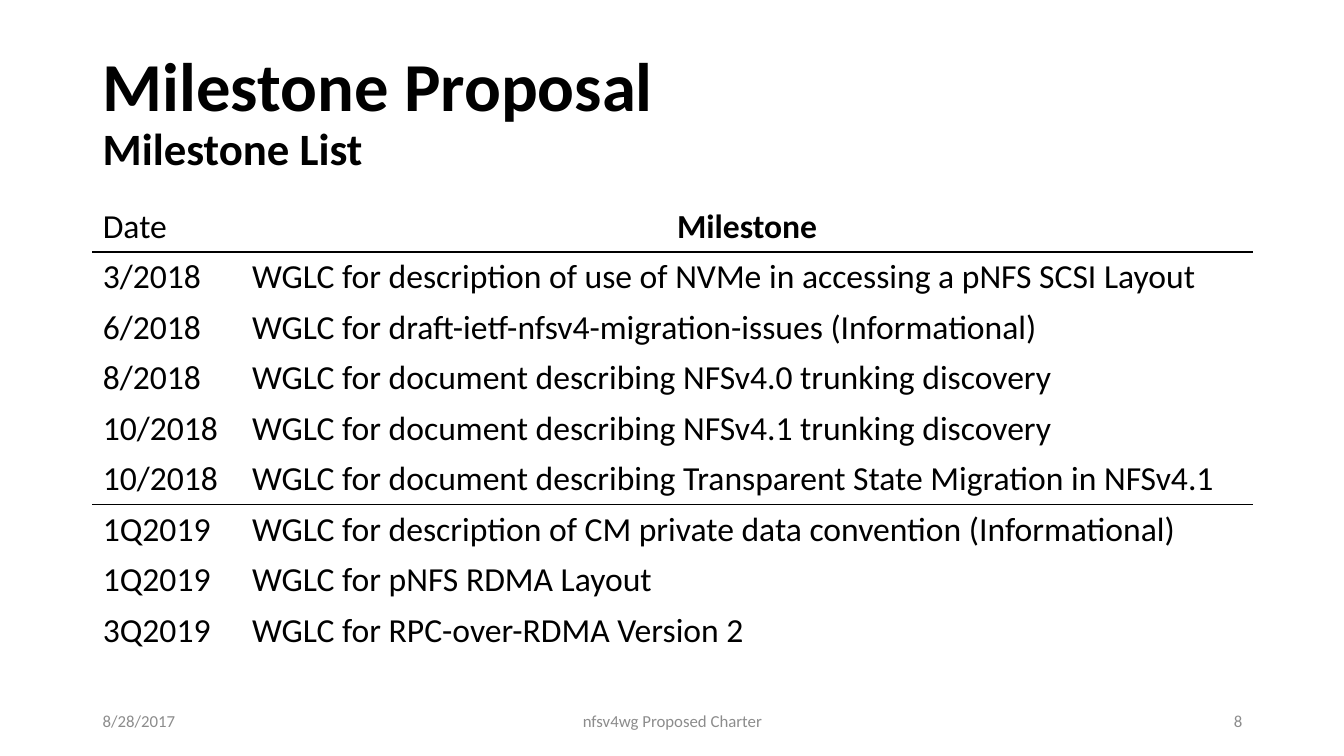
from lxml.etree import fromstring
from pptx import Presentation
from pptx.dml.color import RGBColor
from pptx.enum.text import MSO_ANCHOR, PP_ALIGN
from pptx.util import Inches, Pt

WIDE, HIGH = 13.33, 7.5
EDGE, SPAN = 0.92, 11.5
HUES = {"ink": "000000", "page": "FFFFFF", "foot": "8C8C8C"}
NS = "http://schemas.openxmlformats.org/drawingml/2006/main"
HEAD = ("Date", "Milestone")
GOALS = [
    ("3/2018", "WGLC for description of use of NVMe in accessing a pNFS SCSI Layout"),
    ("6/2018", "WGLC for draft-ietf-nfsv4-migration-issues (Informational)"),
    ("8/2018", "WGLC for document describing NFSv4.0 trunking discovery"),
    ("10/2018", "WGLC for document describing NFSv4.1 trunking discovery"),
    ("10/2018", "WGLC for document describing Transparent State Migration in NFSv4.1"),
    ("1Q2019", "WGLC for description of CM private data convention (Informational)"),
    ("1Q2019", "WGLC for pNFS RDMA Layout"),
    ("3Q2019", "WGLC for RPC-over-RDMA Version 2"),
]
RULED = (0, 5)


def write(para, text, size=24, hue="ink", bold=False, align=PP_ALIGN.LEFT):
    """Add a formatted run to a paragraph."""
    para.alignment = align
    run = para.add_run()
    run.text = text
    font = run.font
    font.name, font.size, font.bold = "Calibri", Pt(size), bold
    font.color.rgb = RGBColor.from_string(HUES[hue])


def add_box(slide, box):
    """Add a wrapped, middle-anchored text box and return its first paragraph."""
    frame = slide.shapes.add_textbox(*map(Inches, box)).text_frame
    frame.word_wrap = True
    frame.vertical_anchor = MSO_ANCHOR.MIDDLE
    return frame.paragraphs[0]


def add_title(slide, box):
    """Place the title and its smaller second line."""
    para = add_box(slide, box)
    para.line_spacing = 0.9
    write(para, "Milestone Proposal", size=49, bold=True)
    para.add_line_break()
    write(para, "Milestone List", size=32, bold=True)


def set_edges(cell, above, below):
    """Draw the four borders of a cell, with the given top and bottom hues."""
    props = cell._tc.get_or_add_tcPr()
    sides = {"L": "page", "R": "page", "T": above, "B": below}
    for spot, (side, hue) in enumerate(sides.items()):
        props.insert(spot, fromstring(
            f'<a:ln{side} xmlns:a="{NS}" w="{Pt(1)}"><a:solidFill>'
            f'<a:srgbClr val="{HUES[hue]}"/></a:solidFill></a:ln{side}>'))


def add_goals(slide, box):
    """Place the milestone table, ruled below the header and the 2018 rows."""
    rows = [HEAD, *GOALS]
    grid = slide.shapes.add_table(len(rows), len(HEAD), *map(Inches, box)).table
    grid.first_row = grid.horz_banding = False
    dates = 1.48
    for col, wide in zip(grid.columns, (dates, box[2] - dates)):
        col.width = Inches(wide)
    for r, texts in enumerate(rows):
        above = "ink" if r - 1 in RULED else "page"
        below = "ink" if r in RULED else "page"
        for c, text in enumerate(texts):
            cell = grid.cell(r, c)
            cell.fill.background()
            set_edges(cell, above, below)
            main = r == 0 and c == 1
            write(cell.text_frame.paragraphs[0], text, bold=main,
                  align=PP_ALIGN.CENTER if main else PP_ALIGN.LEFT)


def add_foot(slide, box):
    """Place the date, the deck name and the page number."""
    left, top, wide, high = box
    side, mid = 3, 4.5
    parts = [
        ("8/28/2017", left, side, PP_ALIGN.LEFT),
        ("nfsv4wg Proposed Charter", left + (wide - mid) / 2, mid, PP_ALIGN.CENTER),
        ("8", left + wide - side, side, PP_ALIGN.RIGHT),
    ]
    for text, x, w, align in parts:
        write(add_box(slide, (x, top, w, high)), text, size=12, hue="foot", align=align)


def main():
    """Build and save the slide."""
    deck = Presentation()
    deck.slide_width, deck.slide_height = Inches(WIDE), Inches(HIGH)
    slide = deck.slides.add_slide(deck.slide_layouts[6])
    add_title(slide, (EDGE, 0.4, SPAN, 1.45))
    add_goals(slide, (EDGE, 2, SPAN, 4.5))
    add_foot(slide, (EDGE, 6.95, SPAN, 0.4))
    deck.save("out.pptx")


if __name__ == "__main__":
    main()
